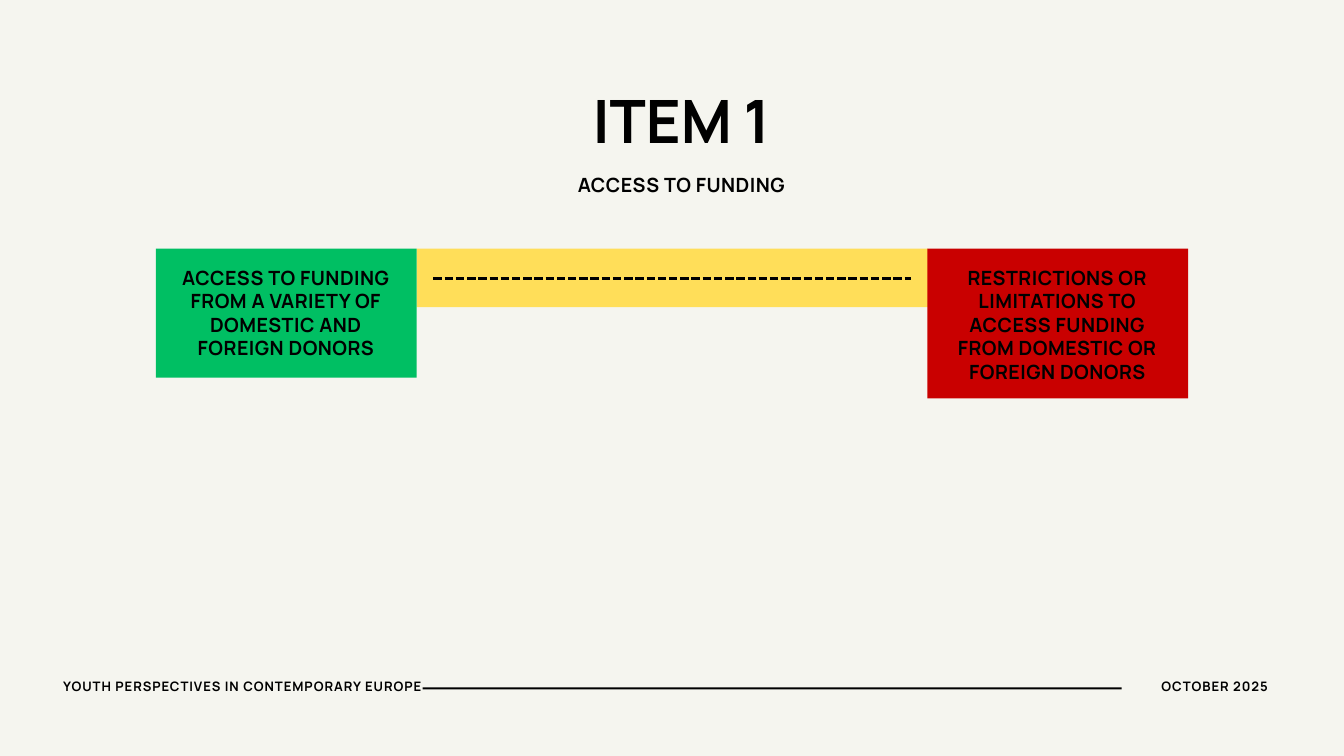
from lxml.etree import SubElement
from pptx import Presentation
from pptx.dml.color import RGBColor
from pptx.enum.dml import MSO_LINE
from pptx.enum.shapes import MSO_CONNECTOR, MSO_SHAPE
from pptx.enum.text import PP_ALIGN
from pptx.oxml.ns import qn
from pptx.util import Inches, Pt

PAPER = RGBColor(0xF5, 0xF5, 0xEF)
BLACK = RGBColor(0, 0, 0)
GREEN = RGBColor(0x00, 0xBF, 0x63)
YELLOW = RGBColor(0xFF, 0xDE, 0x59)
RED = RGBColor(0xC9, 0x00, 0x00)
FONT = "Manrope"
LINE_RATIO = 1.2
SCALE_TOP = 3.7


def add_text(slide, box, text, size, align=PP_ALIGN.CENTER, tracking=0):
    tf = slide.shapes.add_textbox(*map(Inches, box)).text_frame
    tf.word_wrap = True
    tf.margin_left = tf.margin_right = tf.margin_top = tf.margin_bottom = 0
    p = tf.paragraphs[0]
    p.alignment = align
    p.line_spacing = Pt(size * LINE_RATIO)
    p.font.name = FONT
    p.font.size = Pt(size)
    p.font.bold = True
    p.font.color.rgb = BLACK
    r = p.add_run()
    r.text = text
    if tracking:
        r._r.get_or_add_rPr().set("spc", str(int(tracking * 100)))


def add_block(slide, box, color):
    sp = slide.shapes.add_shape(MSO_SHAPE.RECTANGLE, *map(Inches, box))
    sp.shadow.inherit = False
    sp.fill.solid()
    sp.fill.fore_color.rgb = color
    sp.line.fill.background()


def add_dashed_line(slide, left, right, y):
    line = slide.shapes.add_connector(
        MSO_CONNECTOR.STRAIGHT, Inches(left), Inches(y), Inches(right), Inches(y))
    line.line.color.rgb = BLACK
    line.line.width = Pt(3)
    line.line.dash_style = MSO_LINE.SQUARE_DOT
    SubElement(line._element.spPr, qn("a:effectLst"))


def add_heading(slide):
    add_text(slide, (2.44, 1.24, 15.4, 1.09), "ITEM 1", 64)
    add_text(slide, (5.97, 2.57, 8.34, 0.36), "ACCESS TO FUNDING", 21, tracking=0.5)


def add_scale(slide):
    ends = [
        (2.32, 1.92, GREEN, "ACCESS TO FUNDING FROM A VARIETY OF DOMESTIC AND FOREIGN DONORS"),
        (13.8, 2.23, RED, "RESTRICTIONS OR LIMITATIONS TO ACCESS FUNDING FROM DOMESTIC OR FOREIGN DONORS"),
    ]
    add_block(slide, (6.2, SCALE_TOP, 7.61, 0.87), YELLOW)
    for left, height, color, text in ends:
        add_block(slide, (left, SCALE_TOP, 3.88, height), color)
        add_text(slide, (left + 0.3, SCALE_TOP + 0.25, 3.27, height - 0.5), text, 21, tracking=0.5)
    add_dashed_line(slide, 6.45, 13.55, 4.15)


def add_footer(slide):
    add_block(slide, (6.29, 10.23, 10.4, 0.03), BLACK)
    add_text(slide, (16.81, 10.1, 2.06, 0.25), "OCTOBER 2025", 14, PP_ALIGN.RIGHT, 1)
    add_text(slide, (0.94, 10.1, 5.38, 0.25), "YOUTH PERSPECTIVES IN CONTEMPORARY EUROPE",
             14, PP_ALIGN.LEFT, 1)


def main():
    prs = Presentation()
    prs.slide_width = Inches(20)
    prs.slide_height = Inches(11.25)
    slide = prs.slides.add_slide(prs.slide_layouts[6])
    slide.background.fill.solid()
    slide.background.fill.fore_color.rgb = PAPER
    add_heading(slide)
    add_scale(slide)
    add_footer(slide)
    prs.save("out.pptx")


if __name__ == "__main__":
    main()
